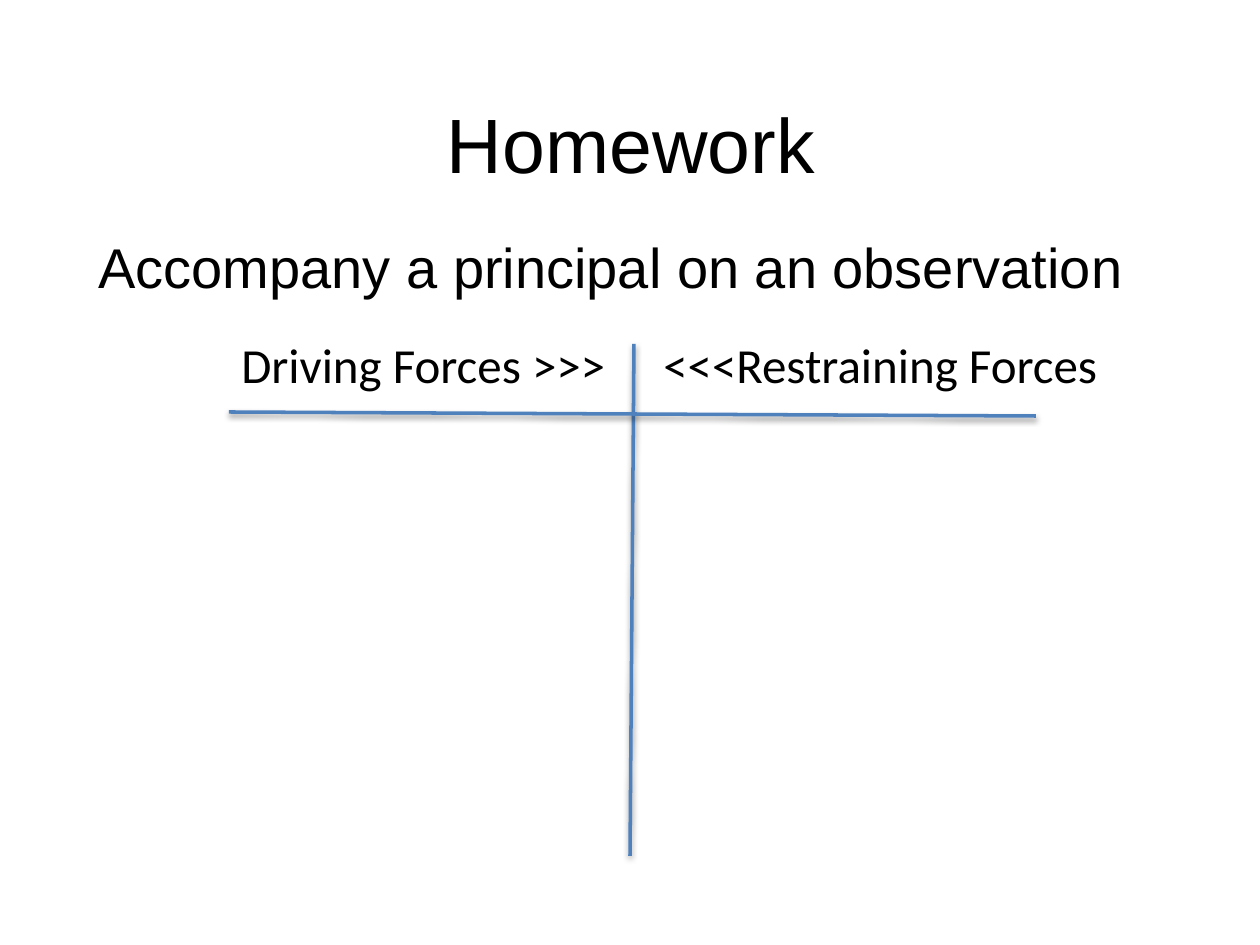
from lxml.etree import SubElement
from pptx import Presentation
from pptx.dml.color import RGBColor as RGB
from pptx.enum.shapes import MSO_CONNECTOR as Link
from pptx.enum.text import MSO_ANCHOR as Anchor, PP_ALIGN as Align
from pptx.oxml.ns import qn
from pptx.util import Emu, Pt

# Content: text with its box (left, top, width, height) in px
TITLE = ("Homework", (25, 64, 1212, 158))
TASK = ("Accompany a principal on an observation", (86, 220, 1106, 93))
HEADS = [
    ("Driving Forces >>>", (229, 328, 401, 72)),
    ("<<<Restraining Forces", (651, 328, 524, 72)),
]
# T-chart lines: from x, from y, to x, to y in px
RULES = [(634, 344, 630, 856), (229, 412, 1036, 416)]

THEME = {
    "ink": RGB(0, 0, 0), "rule": RGB(0x4F, 0x81, 0xBD),
    "main": "Arial", "label": "Calibri",
    "title": Pt(44), "task": Pt(32), "head": Pt(28), "line": Pt(2),
}
SCALE = 914400 / 126


def px(*nums):
    return [Emu(round(n * SCALE)) for n in nums]


def write(shape, text, face, size, align=Align.LEFT, anchor=Anchor.TOP):
    frame = shape.text_frame
    frame.word_wrap = True
    frame.vertical_anchor = anchor
    par = frame.paragraphs[0]
    par.text = text
    par.alignment = align
    par.font.name = THEME[face]
    par.font.size = THEME[size]
    par.font.color.rgb = THEME["ink"]


def draw(slide, ends):
    line = slide.shapes.add_connector(Link.STRAIGHT, *px(*ends))
    line.line.color.rgb = THEME["rule"]
    line.line.width = THEME["line"]
    # Soft shadow straight below the line
    fx = SubElement(line._element.spPr, qn("a:effectLst"))
    shade = SubElement(fx, qn("a:outerShdw"), blurRad="40000", dist="20000",
                       dir="5400000", rotWithShape="0")
    tone = SubElement(shade, qn("a:srgbClr"), val=str(THEME["ink"]))
    SubElement(tone, qn("a:alpha"), val="38000")


def main():
    deck = Presentation()
    deck.slide_width, deck.slide_height = px(1260, 945)
    slide = deck.slides.add_slide(deck.slide_layouts[5])

    # Title and task
    text, box = TITLE
    title = slide.shapes.title
    title.left, title.top, title.width, title.height = px(*box)
    write(title, text, "main", "title", Align.CENTER, Anchor.MIDDLE)
    text, box = TASK
    write(slide.shapes.add_textbox(*px(*box)), text, "main", "task",
          anchor=Anchor.MIDDLE)

    # T-chart
    for ends in RULES:
        draw(slide, ends)
    for text, box in HEADS:
        write(slide.shapes.add_textbox(*px(*box)), text, "label", "head")

    deck.save("out.pptx")


if __name__ == "__main__":
    main()
